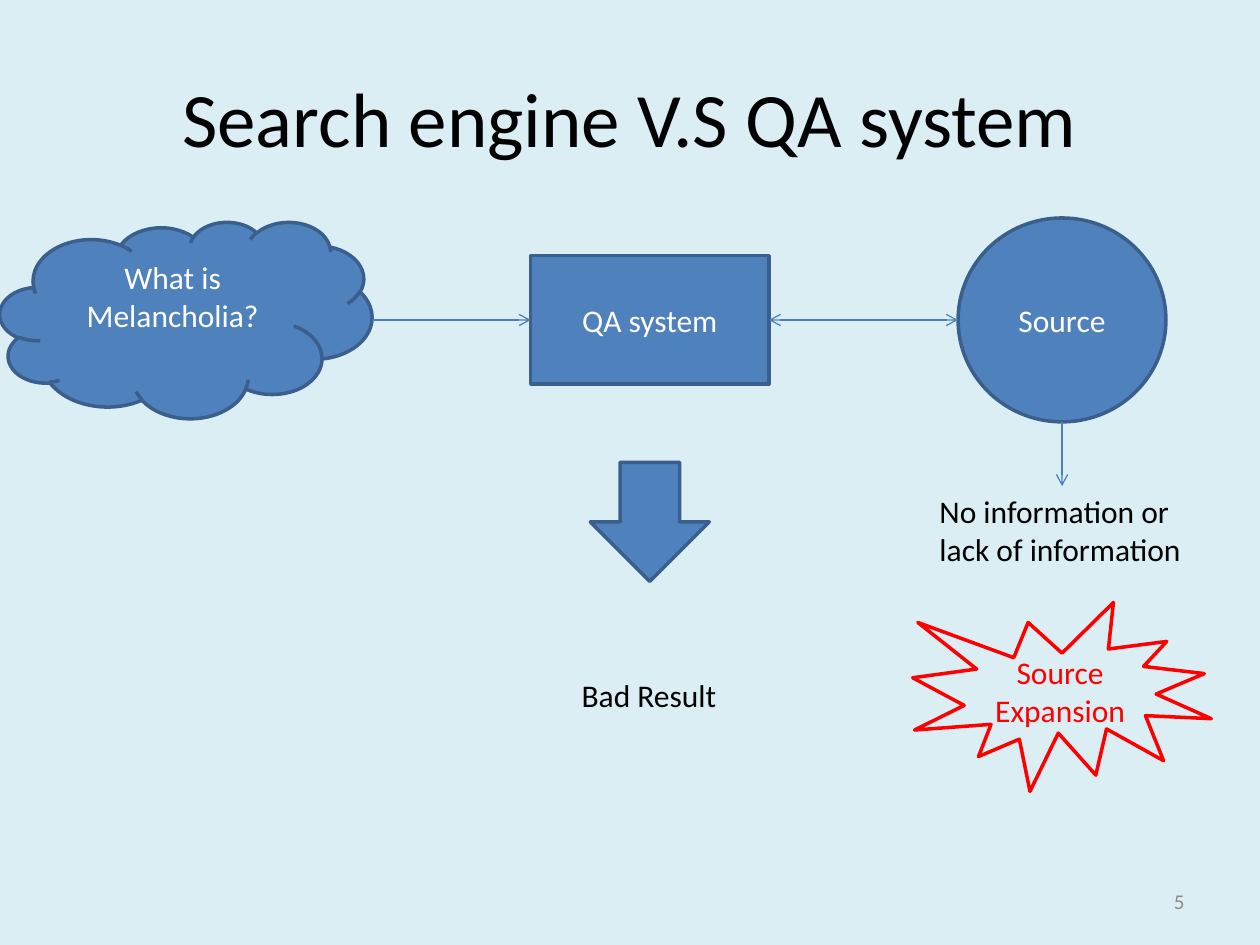
from lxml.etree import SubElement
from pptx import Presentation
from pptx.dml.color import RGBColor
from pptx.enum.shapes import MSO_CONNECTOR, MSO_SHAPE
from pptx.enum.text import MSO_ANCHOR, PP_ALIGN
from pptx.oxml.ns import qn
from pptx.util import Cm, Pt

COLORS = {
    "background": "DBEEF4", "fill": "4F81BD", "outline": "3A5F8C",
    "arrow": "4B7EBC", "alert": "FF0000", "light": "FFFFFF",
    "dark": "000000", "muted": "8C8C8C",
}
FONT = "Calibri"
TITLE = "Search engine V.S QA system"

# Centres of the flow row and of the columns, in cm
ROW = 6.45
QUESTION, SYSTEM, SOURCE = 3.75, 13.1, 21.41

# name: shape, text, centre x, centre y, width, height, fill, line, text colour
SHAPES = {
    "system": (MSO_SHAPE.RECTANGLE, "QA system", SYSTEM, ROW, 4.8, 2.59, "fill", "outline", "light"),
    "result arrow": (MSO_SHAPE.DOWN_ARROW, "", SYSTEM, 10.52, 2.4, 2.4, "fill", "outline", "light"),
    "source": (MSO_SHAPE.OVAL, "Source", SOURCE, ROW, 4.19, 4.11, "fill", "outline", "light"),
    "question": (MSO_SHAPE.CLOUD, "What is Melancholia?", QUESTION, ROW, 7.5, 3.96, "fill", "outline", "light"),
    "expansion": (MSO_SHAPE.EXPLOSION1, "Source\nExpansion", SOURCE, 14.05, 6.02, 3.81, None, "alert", "alert"),
}

# text, centre x, centre y, width, height, size, colour, alignment, wrap
LABELS = [
    ("No information or\nlack of information", SOURCE, 10.7, 5.44, 1.8, 18, "dark", PP_ALIGN.LEFT, False),
    ("Bad Result", SYSTEM, 14.02, 3.25, 1.02, 18, "dark", PP_ALIGN.LEFT, False),
    ("5", 21.17, 18.16, 5.92, 1.02, 12, "muted", PP_ALIGN.RIGHT, True),
]


def color(name):
    return RGBColor.from_string(COLORS[name])


def frame(x, y, width, height):
    """Turn a centre and a size in cm into left, top, width, height."""
    return Cm(x - width / 2), Cm(y - height / 2), Cm(width), Cm(height)


def write(shape, text, size, color_name, align, anchor=MSO_ANCHOR.MIDDLE, wrap=True):
    text_frame = shape.text_frame
    text_frame.text = text
    text_frame.word_wrap = wrap
    text_frame.vertical_anchor = anchor
    for paragraph in text_frame.paragraphs:
        paragraph.alignment = align
        for span in paragraph.runs:
            span.font.name = FONT
            span.font.size = Pt(size)
            span.font.color.rgb = color(color_name)


def add_node(page, kind, text, x, y, width, height, fill, line, text_color):
    node = page.shapes.add_shape(kind, *frame(x, y, width, height))
    node.shadow.inherit = False
    if fill:
        node.fill.solid()
        node.fill.fore_color.rgb = color(fill)
    else:
        node.fill.background()
    node.line.color.rgb = color(line)
    node.line.width = Pt(2)
    if text:
        write(node, text, 18, text_color, PP_ALIGN.CENTER)
    return node


def add_arrow(page, start, end, heads):
    """Join two points in cm; heads lists headEnd and/or tailEnd."""
    arrow = page.shapes.add_connector(MSO_CONNECTOR.STRAIGHT, *map(Cm, start + end))
    arrow.line.color.rgb = color("arrow")
    arrow.line.width = Pt(0.75)
    line = arrow.line._get_or_add_ln()
    for head in heads:
        SubElement(line, qn(f"a:{head}"), type="arrow")
    SubElement(arrow._element.spPr, qn("a:effectLst"))
    return arrow


def main():
    deck = Presentation()
    deck.slide_width, deck.slide_height = Cm(25.4), Cm(19.05)
    page = deck.slides.add_slide(deck.slide_layouts[5])
    page.background.fill.solid()
    page.background.fill.fore_color.rgb = color("background")

    title = page.shapes.title
    title.left, title.top, title.width, title.height = frame(12.7, 2.35, 22.86, 3.18)
    write(title, TITLE, 44, "dark", PP_ALIGN.CENTER)

    nodes = {name: add_node(page, *values) for name, values in SHAPES.items()}
    nodes["question"].text_frame.margin_bottom = Cm(0.9)

    system_left, system_right = SYSTEM - 2.4, SYSTEM + 2.4
    source_left, source_bottom = SOURCE - 2.1, ROW + 2.06
    ask = add_arrow(page, (QUESTION + 3.75, ROW), (system_left, ROW), ["tailEnd"])
    ask.end_connect(nodes["system"], 1)
    lookup = add_arrow(page, (system_right, ROW), (source_left, ROW), ["headEnd", "tailEnd"])
    lookup.begin_connect(nodes["system"], 3)
    add_arrow(page, (SOURCE, source_bottom), (SOURCE, 9.8), ["tailEnd"])

    for text, x, y, width, height, size, color_name, align, wrap in LABELS:
        box = page.shapes.add_textbox(*frame(x, y, width, height))
        anchor = MSO_ANCHOR.MIDDLE if wrap else MSO_ANCHOR.TOP
        write(box, text, size, color_name, align, anchor, wrap)

    deck.save("out.pptx")


if __name__ == "__main__":
    main()
